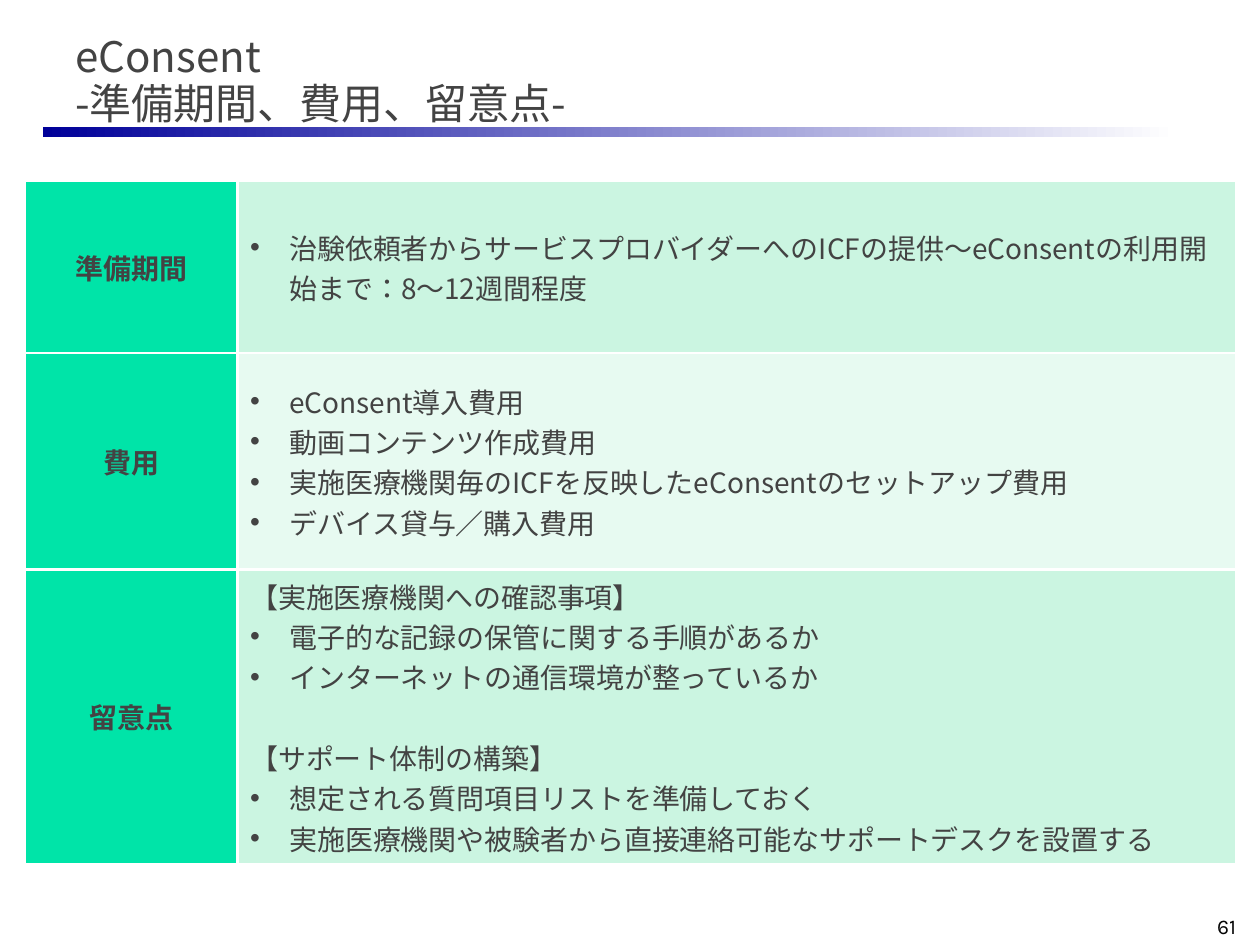
from lxml import etree
from pptx import Presentation
from pptx.dml.color import RGBColor
from pptx.enum.lang import MSO_LANGUAGE_ID
from pptx.enum.shapes import MSO_SHAPE
from pptx.enum.text import MSO_ANCHOR, PP_ALIGN
from pptx.oxml.ns import qn
from pptx.util import Cm, Pt

RECT = MSO_SHAPE.RECTANGLE
MIDDLE, BOTTOM = MSO_ANCHOR.MIDDLE, MSO_ANCHOR.BOTTOM
LEFT, CENTER, RIGHT = PP_ALIGN.LEFT, PP_ALIGN.CENTER, PP_ALIGN.RIGHT
JAPANESE = MSO_LANGUAGE_ID.JAPANESE

BULLET = "• "
HEADING = "【"
COLUMNS = (4.29, 20.12)
# label, row height in cm, fill of the details, lines of the details
ROWS = [
    ("準備期間", 3.46, "CBF5E1", [
        "• 治験依頼者からサービスプロバイダーへのICFの提供～eConsentの利用開始まで：8～12週間程度",
    ]),
    ("費用", 4.36, "E7FAF1", [
        "• eConsent導入費用",
        "• 動画コンテンツ作成費用",
        "• 実施医療機関毎のICFを反映したeConsentのセットアップ費用",
        "• デバイス貸与／購入費用",
    ]),
    ("留意点", 5.93, "CBF5E1", [
        "【実施医療機関への確認事項】",
        "• 電子的な記録の保管に関する手順があるか",
        "• インターネットの通信環境が整っているか",
        "【サポート体制の構築】",
        "• 想定される質問項目リストを準備しておく",
        "• 実施医療機関や被験者から直接連絡可能なサポートデスクを設置する",
    ]),
]


def rgb(value):
    return RGBColor.from_string(value)


class SlideBuilder:
    font = "Noto Sans CJK JP"
    number_font = "Karla"
    ink = "434343"
    label_fill = "00E4A8"
    border = "FFFFFF"
    body_size = 16
    line_height = Pt(23)
    indent = Cm(0.79)

    def __init__(self, prs):
        self.slide = prs.slides.add_slide(prs.slide_layouts[6])

    def style(self, p, size, bold=False, align=LEFT, font=None, color=None):
        p.alignment = align
        for r in p.runs:
            r.font.size = Pt(size)
            r.font.bold = bold
            r.font.language_id = JAPANESE
            r.font.name = font or self.font
            r.font.color.rgb = rgb(color or self.ink)
            ea = etree.SubElement(r.font._element, qn("a:ea"))
            ea.set("typeface", font or self.font)

    def gradient_bar(self, left, top, width, height, colors):
        sp = self.slide.shapes.add_shape(RECT, Cm(left), Cm(top), Cm(width), Cm(height))
        sp.shadow.inherit = False
        sp.line.fill.background()
        sp.fill.gradient()
        sp.fill.gradient_angle = 0
        for stop, color in zip(sp.fill.gradient_stops, colors):
            stop.color.rgb = rgb(color)

    def text(self, left, top, width, height, text, size, spacing=1.0, **style):
        sp = self.slide.shapes.add_textbox(Cm(left), Cm(top), Cm(width), Cm(height))
        tf = sp.text_frame
        tf.word_wrap = True
        tf.vertical_anchor = BOTTOM
        p = tf.paragraphs[0]
        p.text = text
        p.line_spacing = spacing
        self.style(p, size, **style)

    def cell(self, cell, fill, widths):
        """Fill a cell and give it borders; widths are left, right, top, bottom."""
        tc_pr = cell._tc.get_or_add_tcPr()
        for side, width in zip("LRTB", widths):
            ln = etree.SubElement(tc_pr, qn(f"a:ln{side}"), w=str(Pt(width)))
            solid = etree.SubElement(ln, qn("a:solidFill"))
            etree.SubElement(solid, qn("a:srgbClr"), val=self.border)
        cell.fill.solid()
        cell.fill.fore_color.rgb = rgb(fill)
        cell.vertical_anchor = MIDDLE

    def details(self, tf, lines):
        """Write headings and bulleted lines, with a free line above a later heading."""
        for i, line in enumerate(lines):
            p = tf.add_paragraph() if i else tf.paragraphs[0]
            p.text = line.removeprefix(BULLET)
            if line.startswith(BULLET):
                p_pr = p._p.get_or_add_pPr()
                p_pr.set("marL", str(self.indent))
                p_pr.set("indent", str(-self.indent))
                etree.SubElement(p_pr, qn("a:buFont"), typeface="Arial")
                etree.SubElement(p_pr, qn("a:buChar"), char=BULLET.strip())
            elif i and line.startswith(HEADING):
                p.space_before = self.line_height
            self.style(p, self.body_size)

    def table(self, left, top, columns, rows):
        frame = self.slide.shapes.add_table(
            len(rows), len(columns), Cm(left), Cm(top),
            Cm(sum(columns)), Cm(sum(row[1] for row in rows)))
        table = frame.table
        table.first_row = table.horz_banding = False
        for column, width in zip(table.columns, columns):
            column.width = Cm(width)
        for i, (label, height, fill, lines) in enumerate(rows):
            table.rows[i].height = Cm(height)
            above = 1.5 if i else 1
            below = 1.5 if i < len(rows) - 1 else 1
            head, body = table.cell(i, 0), table.cell(i, 1)
            self.cell(head, self.label_fill, (1, 2.25, above, below))
            self.cell(body, fill, (2.25, 1, above, below))
            p = head.text_frame.paragraphs[0]
            p.text = label
            self.style(p, self.body_size, bold=True, align=CENTER)
            self.details(body.text_frame, lines)


def main():
    prs = Presentation()
    prs.slide_width, prs.slide_height = Cm(25.4), Cm(19.05)
    s = SlideBuilder(prs)
    s.gradient_bar(0.87, 2.56, 22.86, 0.2, ("000099", "FFFFFF"))
    s.text(1.27, 0.43, 21.64, 2.29, "eConsent\v-準備期間、費用、留意点-", 24, spacing=0.93)
    s.text(19.89, 18.21, 5.28, 0.84, "61", 12, align=RIGHT,
           font=s.number_font, color="040404")
    s.table(0.5, 3.66, COLUMNS, ROWS)
    prs.save("out.pptx")


if __name__ == "__main__":
    main()
